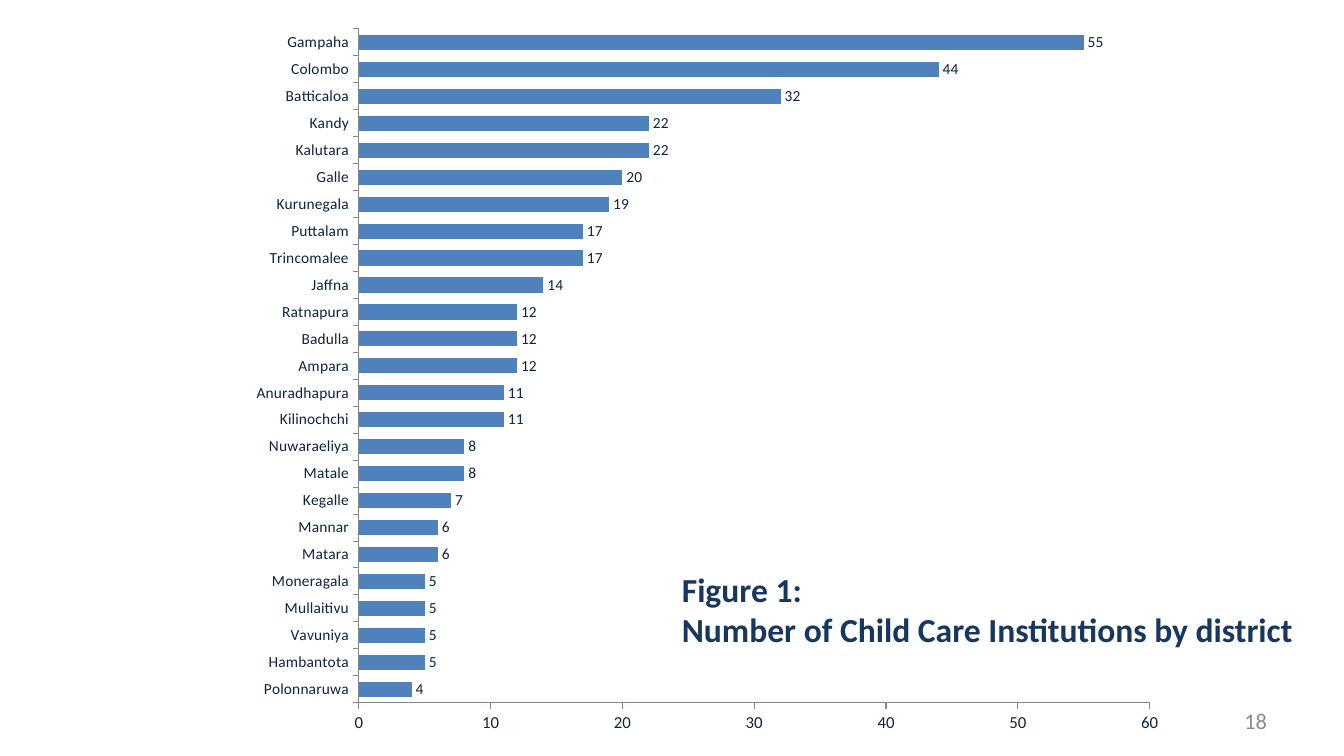
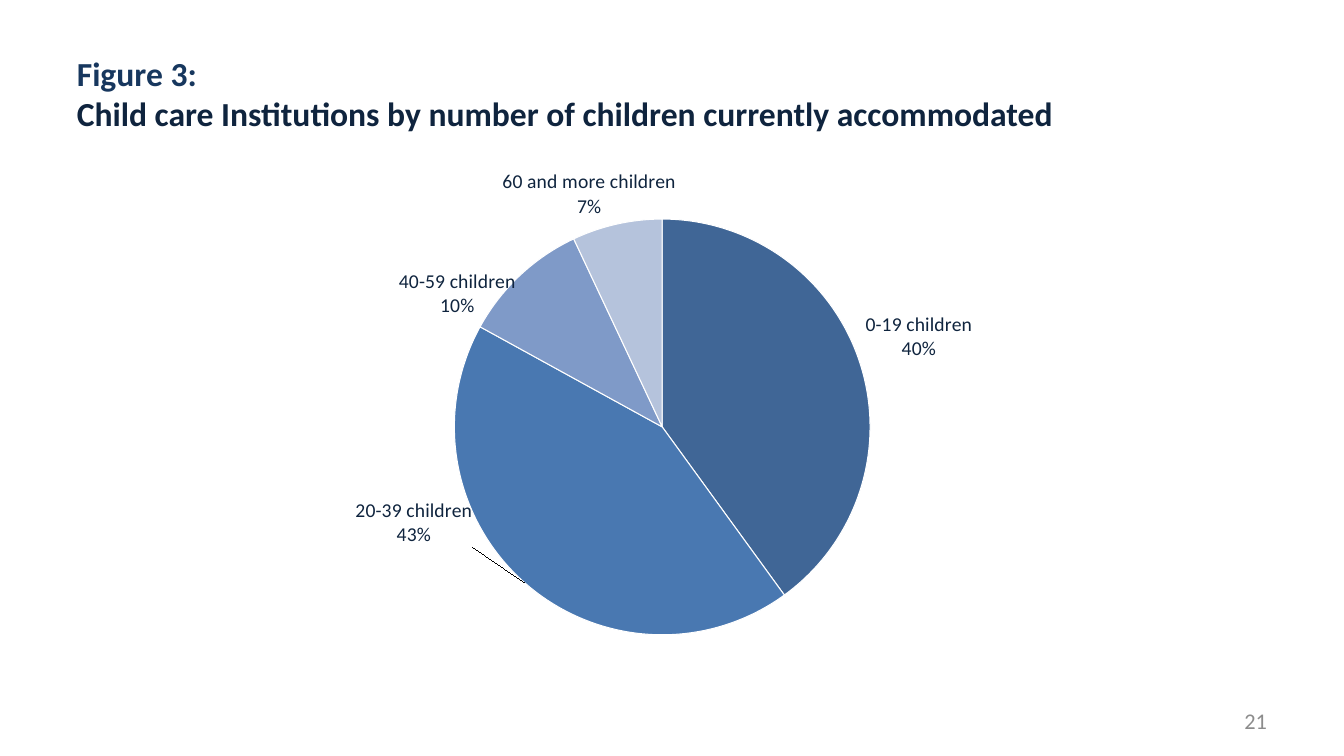
from dataclasses import dataclass
from typing import Any

from lxml import etree
from pptx import Presentation
from pptx import util as u
from pptx.chart import data as chart_data
from pptx.dml.color import RGBColor
from pptx.enum import chart as ch
from pptx.enum import text as t
from pptx.oxml import ns

EMU_PER_PX = 914400 / 100.8
FONT = "Calibri"
NAVY, INK, GRAY, AXIS, BLUE, WHITE = "17375E", "0F243E", "8C8C8C", "868686", "4F81BD", "FFFFFF"

DISTRICTS = {
    "Polonnaruwa": 4, "Hambantota": 5, "Vavuniya": 5, "Mullaitivu": 5, "Moneragala": 5,
    "Matara": 6, "Mannar": 6, "Kegalle": 7, "Matale": 8, "Nuwaraeliya": 8,
    "Kilinochchi": 11, "Anuradhapura": 11, "Ampara": 12, "Badulla": 12, "Ratnapura": 12,
    "Jaffna": 14, "Trincomalee": 17, "Puttalam": 17, "Kurunegala": 19, "Galle": 20,
    "Kalutara": 22, "Kandy": 22, "Batticaloa": 32, "Colombo": 44, "Gampaha": 55,
}


@dataclass(frozen=True)
class Box:
    left: int
    top: int
    width: int
    height: int

    def emu(self) -> list[u.Emu]:
        return [px(n) for n in (self.left, self.top, self.width, self.height)]


@dataclass(frozen=True)
class Slice:
    """One pie slice; the label moves by fractions of the chart size."""
    category: str
    percent: int
    color: str
    label_dx: float
    label_dy: float


SLICES = [
    Slice("0-19", 40, "406696", 0, 0),
    Slice("20-39", 43, "4978B1", -0.04, -0.17),
    Slice("40-59", 10, "7F9AC8", 0, 0.09),
    Slice("60 and more", 7, "B5C3DC", 0.05, 0),
]


def px(length: int) -> u.Emu:
    return u.Emu(round(length * EMU_PER_PX))


def rgb(color: str) -> RGBColor:
    return RGBColor.from_string(color)


def style_font(font: Any, size: int, color: str, bold: bool = False) -> None:
    font.name, font.size, font.bold = FONT, u.Pt(size), bold
    font.color.rgb = rgb(color)


def add_text(slide: Any, box: Box, lines: list[tuple[str, str]], *, size: int,
             bold: bool = False, align: t.PP_ALIGN = t.PP_ALIGN.LEFT) -> None:
    """Write (text, colour) lines as one paragraph with line breaks."""
    frame = slide.shapes.add_textbox(*box.emu()).text_frame
    frame.word_wrap = True
    frame.vertical_anchor = t.MSO_ANCHOR.MIDDLE
    paragraph = frame.paragraphs[0]
    paragraph.alignment = align
    for index, (text, color) in enumerate(lines):
        if index:
            paragraph.add_line_break()
        run = paragraph.add_run()
        run.text = text
        style_font(run.font, size, color, bold)


def add_title(slide: Any, box: Box, number: str, caption: str, caption_color: str) -> None:
    add_text(slide, box, [(number, NAVY), (caption, caption_color)], size=24, bold=True)


def add_page_number(slide: Any, number: int) -> None:
    add_text(slide, Box(964, 701, 313, 40), [(str(number), GRAY)], size=16,
             align=t.PP_ALIGN.RIGHT)


def set_layout(parent: Any, index: int, **values: Any) -> None:
    """Give a chart part a manual layout, inserted at the given child index."""
    tag = ns.qn("c:layout")
    for old in parent.findall(tag):
        parent.remove(old)
    layout = etree.Element(tag)
    manual = etree.SubElement(layout, ns.qn("c:manualLayout"))
    for name, value in values.items():
        etree.SubElement(manual, ns.qn(f"c:{name}")).set("val", str(value))
    parent.insert(index, layout)


def add_chart(slide: Any, kind: ch.XL_CHART_TYPE, box: Box, values: dict[str, int],
              plot_area: tuple[float, float, float, float]) -> Any:
    data = chart_data.CategoryChartData()
    data.categories = list(values)
    data.add_series("Series 1", list(values.values()))
    chart = slide.shapes.add_chart(kind, *box.emu(), data).chart
    chart.has_legend = chart.has_title = False
    style_font(chart.font, 18, "000000")
    x, y, w, h = plot_area
    area = chart.plots[0]._element.getparent()
    set_layout(area, 0, layoutTarget="inner", xMode="edge", yMode="edge", x=x, y=y, w=w, h=h)
    return chart


def style_axis(axis: Any, size: int) -> None:
    axis.has_major_gridlines = False
    axis.major_tick_mark = ch.XL_TICK_MARK.OUTSIDE
    axis.minor_tick_mark = ch.XL_TICK_MARK.NONE
    axis.format.line.color.rgb = rgb(AXIS)
    axis.format.line.width = u.Pt(0.75)
    style_font(axis.tick_labels.font, size, INK)


def add_district_chart(slide: Any) -> None:
    chart = add_chart(slide, ch.XL_CHART_TYPE.BAR_CLUSTERED, Box(213, 8, 986, 748),
                      DISTRICTS, (0.148, 0.028, 0.802, 0.901))
    style_axis(chart.category_axis, 11)
    axis = chart.value_axis
    style_axis(axis, 12)
    axis.minimum_scale, axis.maximum_scale, axis.major_unit = 0, 60, 10
    axis.tick_labels.number_format = "###0"
    axis.tick_labels.number_format_is_linked = False

    plot = chart.plots[0]
    plot.gap_width = 78
    plot.vary_by_categories = False
    fill = plot.series[0].format.fill
    fill.solid()
    fill.fore_color.rgb = rgb(BLUE)
    plot.has_data_labels = True
    labels = plot.data_labels
    labels.show_value = True
    labels.position = ch.XL_LABEL_POSITION.OUTSIDE_END
    labels.number_format = "###0"
    labels.number_format_is_linked = False
    style_font(labels.font, 11, INK)


def add_children_chart(slide: Any) -> None:
    chart = add_chart(slide, ch.XL_CHART_TYPE.PIE, Box(67, 154, 1210, 521),
                      {part.category: part.percent for part in SLICES},
                      (0.32, 0.125, 0.344, 0.798))
    series = chart.plots[0].series[0]
    for index, part in enumerate(SLICES):
        point = series.points[index]
        point.format.fill.solid()
        point.format.fill.fore_color.rgb = rgb(part.color)
        point.format.line.color.rgb = rgb(WHITE)
        point.format.line.width = u.Pt(0.75)

        label = point.data_label
        frame = label.text_frame
        frame.text = f"{part.category} children\n{part.percent}%"
        for paragraph in frame.paragraphs:
            style_font(paragraph.runs[0].font, 14, INK)
        label.position = ch.XL_LABEL_POSITION.OUTSIDE_END
        if part.label_dx or part.label_dy:
            element = series._element.findall(f".//{ns.qn('c:dLbl')}")[index]
            set_layout(element, 1, x=part.label_dx, y=part.label_dy)


def main() -> None:
    presentation = Presentation()
    presentation.slide_width, presentation.slide_height = px(1344), px(756)
    blank = presentation.slide_layouts[6]

    slide = presentation.slides.add_slide(blank)
    add_district_chart(slide)
    add_title(slide, Box(672, 546, 649, 126), "Figure 1:",
              "Number of Child Care Institutions by district", NAVY)
    add_page_number(slide, 18)

    slide = presentation.slides.add_slide(blank)
    add_title(slide, Box(67, 30, 1210, 126), "Figure 3:",
              "Child care Institutions by number of children currently accommodated", INK)
    add_page_number(slide, 21)
    add_children_chart(slide)

    presentation.save("out.pptx")


if __name__ == "__main__":
    main()
